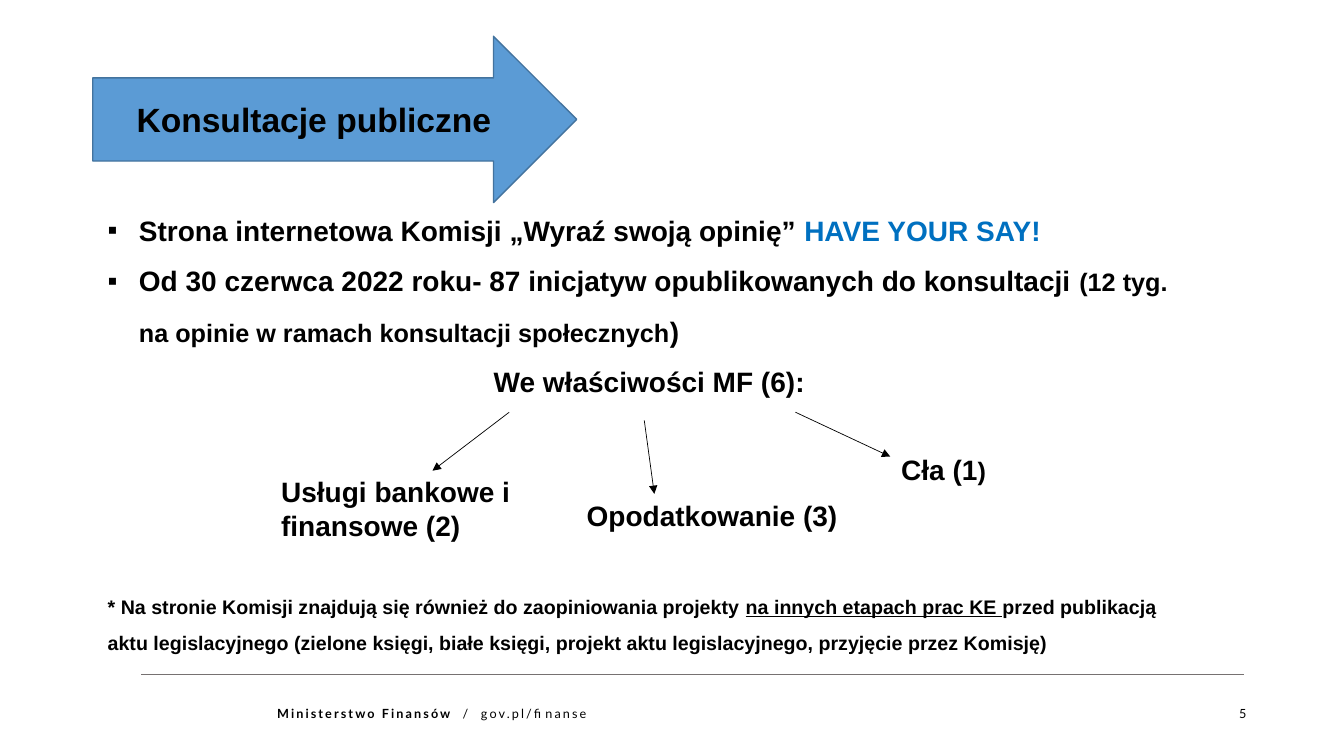
from lxml.etree import SubElement
from pptx import Presentation
from pptx.dml.color import RGBColor
from pptx.enum.shapes import MSO_CONNECTOR, MSO_SHAPE
from pptx.enum.text import MSO_ANCHOR, PP_ALIGN
from pptx.oxml.ns import qn
from pptx.util import Inches, Pt

BLACK = "000000"
LINK_BLUE = "0070C0"
ARROW_BLUE = "5B9BD5"
ARROW_EDGE = "43739E"
RULE_GREY = "767171"

BODY_LEFT, BODY_WIDTH = 0.97, 10.94
HANGING = 0.31


def color(hex_code):
    return RGBColor.from_string(hex_code)


def box(slide, left, top, width, height):
    frame = slide.shapes.add_textbox(*map(Inches, (left, top, width, height))).text_frame
    frame.word_wrap = True
    return frame


def write(paragraph, *pieces, size=20, bold=True, font="Arial", spacing=None, align=None):
    """Each piece is a text, or a text with a dict of its differing format."""
    for piece in pieces:
        words, style = (piece, {}) if isinstance(piece, str) else piece
        run = paragraph.add_run()
        run.text = words
        run.font.name = font
        run.font.size = Pt(style.get("size", size))
        run.font.bold = style.get("bold", bold)
        run.font.underline = style.get("underline")
        run.font.color.rgb = color(style.get("color", BLACK))
    paragraph.line_spacing = spacing
    paragraph.alignment = align


def add_bullet(paragraph):
    properties = paragraph._p.get_or_add_pPr()
    properties.set("marL", str(Inches(HANGING)))
    properties.set("indent", str(-Inches(HANGING)))
    SubElement(properties, qn("a:buFont"), typeface="Arial")
    SubElement(properties, qn("a:buChar"), char="▪")


def line(slide, start, end, hex_code=BLACK, arrow=False):
    connector = slide.shapes.add_connector(
        MSO_CONNECTOR.STRAIGHT, *map(Inches, (*start, *end)))
    connector.line.color.rgb = color(hex_code)
    connector.line.width = Pt(0.5)
    if arrow:
        SubElement(connector.line._get_or_add_ln(), qn("a:tailEnd"), type="triangle")
    SubElement(connector._element.spPr, qn("a:effectLst"))


def title_arrow(slide, title):
    arrow = slide.shapes.add_shape(
        MSO_SHAPE.RIGHT_ARROW, *map(Inches, (0.92, 0.36, 4.8, 1.65)))
    arrow.shadow.inherit = False
    arrow.fill.solid()
    arrow.fill.fore_color.rgb = color(ARROW_BLUE)
    arrow.line.color.rgb = color(ARROW_EDGE)
    arrow.line.width = Pt(1)
    arrow.text_frame.vertical_anchor = MSO_ANCHOR.MIDDLE
    write(arrow.text_frame.paragraphs[0], title, size=24, align=PP_ALIGN.CENTER)


def consultations(slide):
    frame = box(slide, BODY_LEFT, 1.9, BODY_WIDTH, 2.1)
    website = frame.paragraphs[0]
    add_bullet(website)
    write(website, "Strona internetowa Komisji „Wyraź swoją opinię” ",
          ("HAVE YOUR SAY!", {"color": LINK_BLUE}), spacing=1.5)
    initiatives = frame.add_paragraph()
    add_bullet(initiatives)
    write(initiatives,
          "Od 30 czerwca 2022 roku- 87 inicjatyw opublikowanych do konsultacji ",
          ("(12 tyg. na opinie w ramach konsultacji społecznych", {"size": 18}),
          ")", spacing=1.5)
    write(frame.add_paragraph(), "We właściwości MF (6):",
          spacing=1.5, align=PP_ALIGN.CENTER)


def footnote(slide):
    frame = box(slide, BODY_LEFT, 5.72, BODY_WIDTH, 0.85)
    write(frame.paragraphs[0],
          "* Na stronie Komisji znajdują się również do zaopiniowania projekty ",
          ("na innych etapach prac KE ", {"underline": True}),
          "przed publikacją aktu legislacyjnego (zielone księgi, białe księgi, "
          "projekt aktu legislacyjnego, przyjęcie przez Komisję)",
          size=14, spacing=1.55)


def footer(slide, left, width, *pieces, align=None):
    frame = box(slide, left, 6.98, width, 0.22)
    frame.margin_top = frame.margin_bottom = 0
    frame.vertical_anchor = MSO_ANCHOR.MIDDLE
    paragraph = frame.paragraphs[0]
    write(paragraph, *pieces, size=9, bold=False, font="Lato", spacing=0.9, align=align)
    for run in paragraph.runs:
        run.font._element.set("spc", "150")


def main():
    deck = Presentation()
    deck.slide_width, deck.slide_height = Inches(13.33), Inches(7.5)
    slide = deck.slides.add_slide(deck.slide_layouts[6])

    title_arrow(slide, "Konsultacje publiczne")
    consultations(slide)

    # Areas: arrow start, arrow end, label place, label
    areas = [
        ((5.05, 4.09), (4.29, 4.67), (2.69, 4.66, 2.83, 0.77),
         ["Usługi bankowe i finansowe (2)"]),
        ((6.39, 4.17), (6.49, 4.9), (5.72, 4.9, 2.91, 0.44), ["Opodatkowanie (3)"]),
        ((7.89, 4.09), (8.83, 4.53), (8.84, 4.44, 1.34, 0.44),
         ["Cła (1", (")", {"size": 18})]),
    ]
    for start, end, place, label in areas:
        line(slide, start, end, arrow=True)
        write(box(slide, *place).paragraphs[0], *label)

    footnote(slide)

    # Footer
    line(slide, (1.4, 6.69), (12.34, 6.69), RULE_GREY)
    footer(slide, 2.65, 4.52, ("Ministerstwo Finansów  ", {"bold": True}),
           "/  gov.pl/finanse")
    footer(slide, 11.95, 0.51, "5", align=PP_ALIGN.RIGHT)

    deck.save("out.pptx")


if __name__ == "__main__":
    main()
